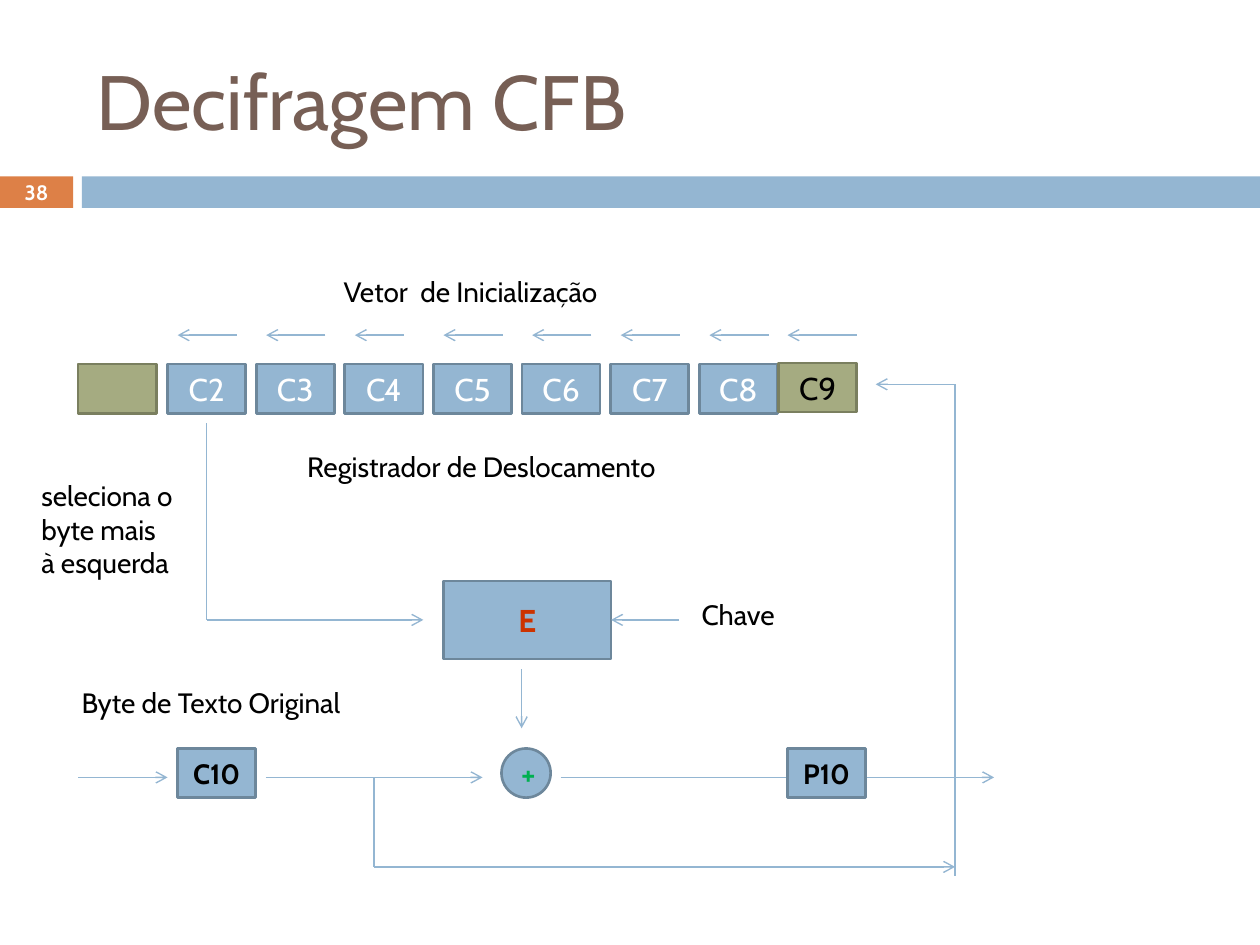
from lxml import etree
from pptx import Presentation
from pptx.dml.color import RGBColor
from pptx.enum.shapes import MSO_CONNECTOR as Conn, MSO_SHAPE as Kind
from pptx.enum.text import MSO_ANCHOR as Anchor, MSO_AUTO_SIZE as Fit, PP_ALIGN as Align
from pptx.oxml.ns import qn
from pptx.util import Inches, Pt

BLUE, EDGE = "94B6D2", "6D879B"
GREEN, MOSS = "A5AB81", "7A7F5F"
ORANGE, BROWN, RED, LIME = "DD8047", "775F55", "CC3300", "00B050"
WHITE, BLACK = "FFFFFF", "000000"
WIDE, HIGH = 0.62, 0.39
STEP = 4.22 / 6


def color(code):
    return RGBColor.from_string(code)


class Deck:
    font = "Cabin"

    def __init__(self):
        self.show = Presentation()
        self.show.slide_width = Inches(10)
        self.show.slide_height = Inches(7.5)
        self.slide = self.show.slides.add_slide(self.show.slide_layouts[6])

    def words(self, frame, text, size, tint, bold=False, align=Align.LEFT):
        para = frame.paragraphs[0]
        para.alignment = align
        run = para.add_run()
        run.text = text
        run.font.name = self.font
        run.font.size = Pt(size)
        run.font.bold = bold
        run.font.color.rgb = color(tint)

    def label(self, x, y, w, h, text, size=16, tint=BLACK, bold=False,
              align=Align.LEFT, anchor=Anchor.TOP, fit=Fit.SHAPE_TO_FIT_TEXT):
        box = self.slide.shapes.add_textbox(Inches(x), Inches(y), Inches(w), Inches(h))
        frame = box.text_frame
        frame.word_wrap = True
        frame.auto_size = fit
        frame.vertical_anchor = anchor
        self.words(frame, text, size, tint, bold, align)

    def block(self, x, y, w=WIDE, h=HIGH, text="", size=18, tint=WHITE,
              bold=False, fill=BLUE, edge=EDGE, kind=Kind.RECTANGLE):
        shape = self.slide.shapes.add_shape(kind, Inches(x), Inches(y), Inches(w), Inches(h))
        shape.shadow.inherit = False
        shape.fill.solid()
        shape.fill.fore_color.rgb = color(fill)
        if edge:
            shape.line.color.rgb = color(edge)
            shape.line.width = Pt(1.5)
        else:
            shape.line.fill.background()
        if text:
            frame = shape.text_frame
            frame.vertical_anchor = Anchor.MIDDLE
            self.words(frame, text, size, tint, bold, Align.CENTER)
        return shape

    def line(self, x1, y1, x2, y2, arrow=True):
        link = self.slide.shapes.add_connector(
            Conn.STRAIGHT, Inches(x1), Inches(y1), Inches(x2), Inches(y2))
        link.line.color.rgb = color(BLUE)
        link.line.width = Pt(0.79)
        if arrow:
            etree.SubElement(link.get_or_add_ln(), qn("a:tailEnd"), type="arrow")
        etree.SubElement(link.element.spPr, qn("a:effectLst"))
        return link

    def save(self):
        self.show.save("out.pptx")


def main():
    deck = Deck()
    deck.block(0, 1.4, 0.58, 0.25, fill=ORANGE, edge=None)
    deck.block(0.65, 1.4, 9.35, 0.25, fill=BLUE, edge=None)
    deck.label(0.67, 0.25, 8.92, 1.08, "Decifragem CFB", 44, BROWN,
               anchor=Anchor.MIDDLE, fit=Fit.NONE)
    deck.label(0, 1.39, 0.58, 0.27, "38", 11.9, WHITE, True,
               Align.CENTER, Anchor.MIDDLE, Fit.NONE)

    deck.block(0.62, 2.89, fill=GREEN, edge=MOSS)
    for i in range(7):
        deck.block(1.33 + i * STEP, 2.89, text=f"C{i + 2}")
        tip = 1.41 + i * STEP
        deck.line(tip + (0.39 if i == 2 else 0.47), 2.66, tip, 2.66)
    deck.block(6.18, 2.88, text="C9", tint=BLACK, fill=GREEN, edge=MOSS)
    deck.line(6.8, 2.66, 6.25, 2.66)

    deck.label(2.63, 2.13, 3.6, 0.37, "Vetor  de Inicialização")
    deck.label(2.34, 3.52, 4.3, 0.37, "Registrador de Deslocamento")
    deck.label(0.23, 3.75, 1.25, 0.9, "seleciona o byte mais à esquerda")
    deck.label(5.47, 4.69, 0.94, 0.37, "Chave")
    deck.label(0.55, 5.39, 2.73, 0.37, "Byte de Texto Original")

    cipher = deck.block(3.52, 4.61, 1.33, 0.62, "E", tint=RED, bold=True)
    deck.line(1.64, 3.36, 1.64, 4.92, False)
    deck.line(1.64, 4.92, 3.36, 4.92)
    deck.line(5.39, 4.92, 4.85, 4.92).end_connect(cipher, 3)
    deck.line(4.14, 5.31, 4.14, 5.78)

    deck.block(1.41, 5.94, text="C10", size=16, tint=BLACK, bold=True)
    deck.block(3.98, 5.94, HIGH, HIGH, "+", tint=LIME, bold=True, kind=Kind.OVAL)
    deck.line(0.62, 6.17, 1.33, 6.17)
    deck.line(2.11, 6.17, 3.83, 6.17)
    deck.line(4.45, 6.17, 6.56, 6.17, False)
    deck.line(6.56, 6.17, 7.89, 6.17)
    deck.block(6.25, 5.94, text="P10", size=16, tint=BLACK, bold=True)

    deck.line(2.97, 6.17, 2.97, 6.88, False)
    deck.line(2.97, 6.88, 7.58, 6.88)
    deck.line(7.58, 6.95, 7.58, 3.05, False)
    deck.line(7.58, 3.05, 6.95, 3.05)
    deck.save()


if __name__ == "__main__":
    main()
